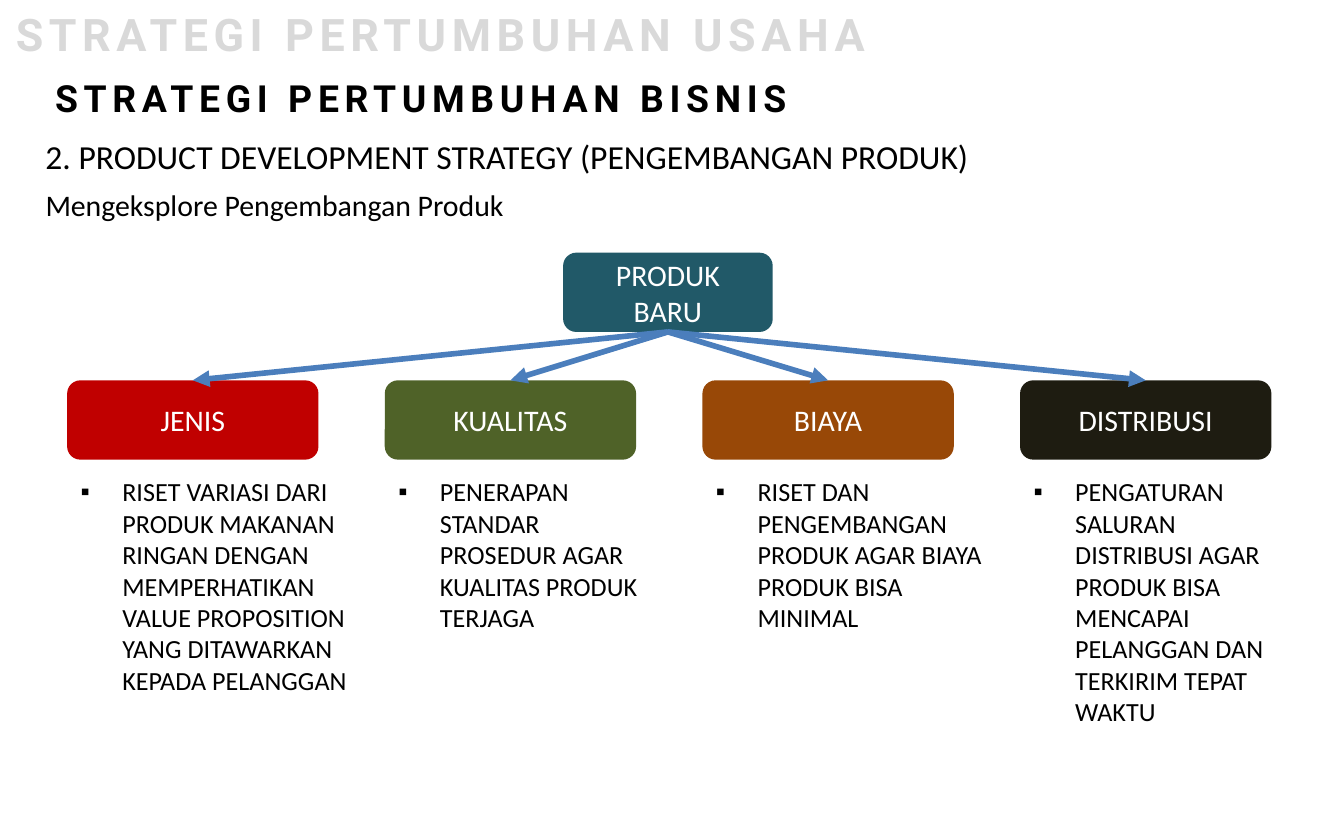
"""Build the product development strategy slide."""
import lxml.etree
import pptx
import pptx.dml.color
import pptx.enum.shapes
import pptx.enum.text
import pptx.oxml.ns
import pptx.util

Inches = pptx.util.Inches
COLORS = {
    "black": "000000", "white": "FFFFFF", "gray": "D9D9D9", "teal": "215968",
    "red": "C00000", "green": "4F6228", "brown": "984807", "dark": "1E1C11",
    "arrow": "4B7EBC",
}
BANNER = "STRATEGI PERTUMBUHAN USAHA"
TITLE = "STRATEGI PERTUMBUHAN BISNIS"
SUBTITLES = [
    ("2. PRODUCT DEVELOPMENT STRATEGY (PENGEMBANGAN PRODUK)", 18, (0.24, 0.96, 7.13, 0.4)),
    ("Mengeksplore Pengembangan Produk", 16, (0.24, 1.34, 3.65, 0.37)),
]
ROOT = "PRODUK BARU"
BRANCHES = [
    ("JENIS", "red", 2.36, 1.75,
     "RISET VARIASI DARI PRODUK MAKANAN RINGAN DENGAN MEMPERHATIKAN VALUE PROPOSITION "
     "YANG DITAWARKAN KEPADA PELANGGAN"),
    ("KUALITAS", "green", 2.08, 1.28,
     "PENERAPAN STANDAR PROSEDUR AGAR KUALITAS PRODUK TERJAGA"),
    ("BIAYA", "brown", 2.27, 1.28,
     "RISET DAN PENGEMBANGAN PRODUK AGAR BIAYA PRODUK BISA MINIMAL"),
    ("DISTRIBUSI", "dark", 2.14, 1.99,
     "PENGATURAN SALURAN DISTRIBUSI AGAR PRODUK BISA MENCAPAI PELANGGAN DAN TERKIRIM "
     "TEPAT WAKTU"),
]
FIRST_LEFT, LAST_LEFT = 0.5, 7.59
BRANCH_TOP, BRANCH_WIDTH, BOX_HEIGHT = 2.83, 1.87, 0.59
LIST_TOP = 3.49


def rgb(name):
    return pptx.dml.color.RGBColor.from_string(COLORS[name])


def place(shape, left, top, width, height):
    shape.left, shape.top = Inches(left), Inches(top)
    shape.width, shape.height = Inches(width), Inches(height)


def write(shape, text, size, color="black", font="Calibri", bold=False, align="LEFT",
          anchor="TOP", spacing=None, bullet=None, wrap=True):
    frame = shape.text_frame
    frame.word_wrap = wrap
    frame.auto_size = pptx.enum.text.MSO_AUTO_SIZE.NONE
    frame.vertical_anchor = getattr(pptx.enum.text.MSO_ANCHOR, anchor)
    para = frame.paragraphs[0]
    para.alignment = getattr(pptx.enum.text.PP_ALIGN, align)
    para.space_before = pptx.util.Pt(0)
    span = para.add_run()
    span.text = text
    if spacing:
        span._r.get_or_add_rPr().set("spc", str(spacing * 100))
    if bullet:
        properties = para._p.get_or_add_pPr()
        properties.set("marL", str(Inches(0.31)))
        properties.set("indent", str(Inches(-0.31)))
        mark = lxml.etree.SubElement(properties, pptx.oxml.ns.qn("a:buChar"))
        mark.set("char", bullet)
    para.font.name, para.font.size = font, pptx.util.Pt(size)
    para.font.bold = bold
    para.font.color.rgb = rgb(color)


def add_box(page, text, color, left, top, width):
    box = page.shapes.add_shape(
        pptx.enum.shapes.MSO_SHAPE.ROUNDED_RECTANGLE,
        Inches(left), Inches(top), Inches(width), Inches(BOX_HEIGHT))
    box.shadow.inherit = False
    box.fill.solid()
    box.fill.fore_color.rgb = rgb(color)
    box.line.fill.background()
    write(box, text, 16, "white", align="CENTER", anchor="MIDDLE")
    return box


def add_arrow(page, start, end):
    arrow = page.shapes.add_connector(pptx.enum.shapes.MSO_CONNECTOR.STRAIGHT, 0, 0, 0, 0)
    arrow.begin_connect(start, 2)
    arrow.end_connect(end, 0)
    arrow.line.color.rgb = rgb("arrow")
    arrow.line.width = pptx.util.Pt(3)
    line = arrow.line._get_or_add_ln()
    lxml.etree.SubElement(line, pptx.oxml.ns.qn("a:tailEnd")).set("type", "triangle")
    lxml.etree.SubElement(arrow._element.spPr, pptx.oxml.ns.qn("a:effectLst"))


def main():
    deck = pptx.Presentation()
    deck.slide_width, deck.slide_height = Inches(10), Inches(6.25)
    page = deck.slides.add_slide(deck.slide_layouts.get_by_name("Comparison"))
    title, *lists = page.placeholders

    place(title, 0.31, 0.51, 9.42, 0.44)
    write(title, TITLE, 20, font="Roboto", bold=True, spacing=3)
    banner = page.shapes.add_textbox(Inches(0.02), 0, Inches(10), Inches(0.5))
    write(banner, BANNER, 24, "gray", "Roboto", bold=True, spacing=3)
    for text, size, area in SUBTITLES:
        write(page.shapes.add_textbox(*map(Inches, area)), text, size, wrap=False)

    root = add_box(page, ROOT, "teal", 4.19, 1.88, 1.56)
    pitch = (LAST_LEFT - FIRST_LEFT) / (len(BRANCHES) - 1)
    for index, (name, color, width, height, detail) in enumerate(BRANCHES):
        left = FIRST_LEFT + index * pitch
        branch = add_box(page, name, color, left, BRANCH_TOP, BRANCH_WIDTH)
        add_arrow(page, root, branch)
        place(lists[index], left, LIST_TOP, width, height)
        write(lists[index], detail, 14, bullet="▪")

    deck.save("out.pptx")


if __name__ == "__main__":
    main()
